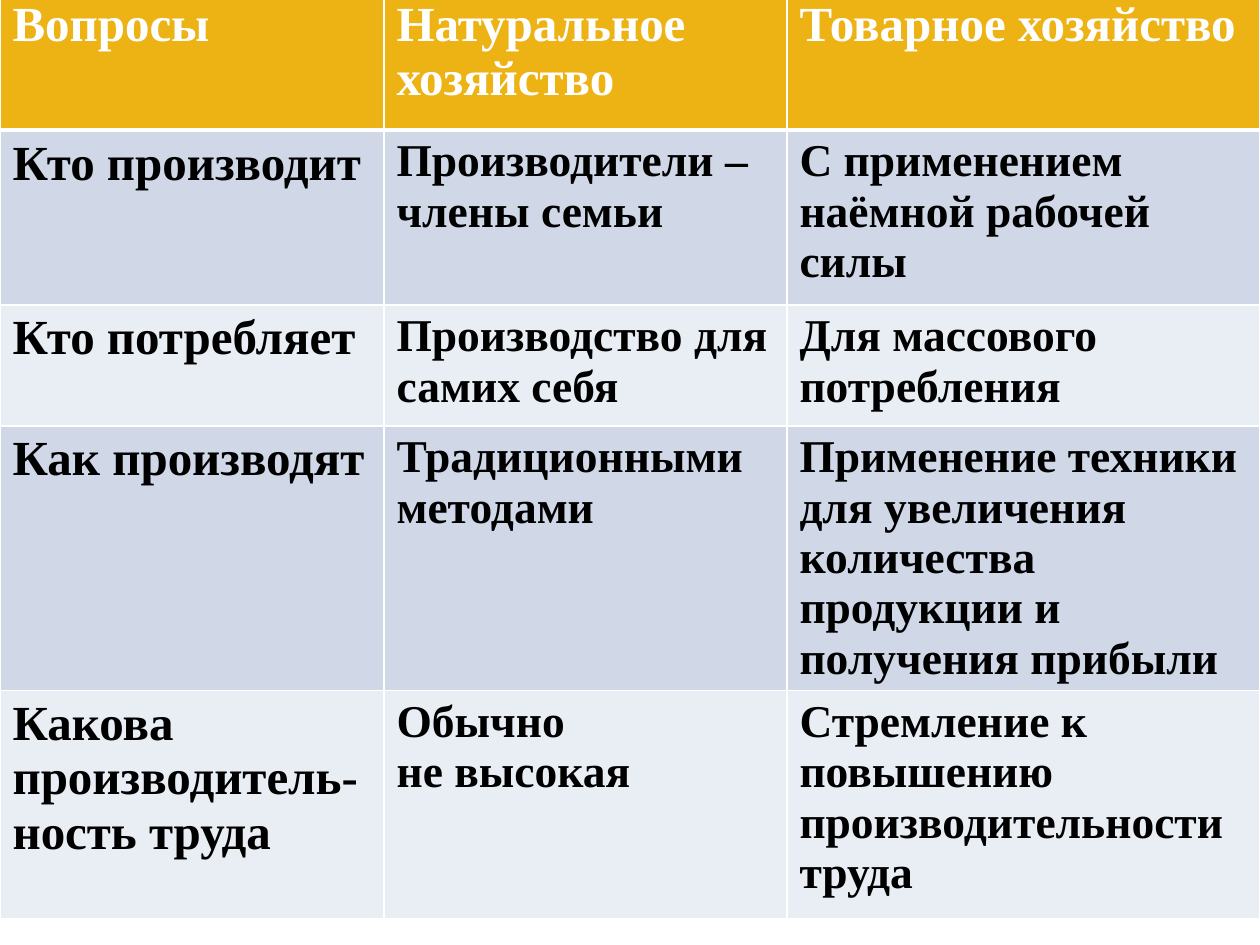
from pptx import Presentation
from pptx.dml.color import RGBColor
from pptx.oxml.ns import qn
from pptx.util import Emu, Pt
from lxml.etree import SubElement

PX = 914400 // 126
WHITE = RGBColor(0xFF, 0xFF, 0xFF)
BLACK = RGBColor(0x00, 0x00, 0x00)
GOLD = RGBColor(0xED, 0xB2, 0x14)
BAND_DARK = RGBColor(0xD0, 0xD8, 0xE8)
BAND_LIGHT = RGBColor(0xE9, 0xED, 0xF4)

COLUMN_WIDTHS = [384, 403, 473]
ROW_HEIGHTS = [139, 175, 121, 205, 228]
ROWS = [
    ["Вопросы", "Натуральное хозяйство", "Товарное хозяйство"],
    ["Кто производит", "Производители – члены семьи",
     "С применением наёмной рабочей силы"],
    ["Кто потребляет", "Производство для самих себя",
     "Для массового потребления"],
    ["Как производят", "Традиционными методами",
     "Применение техники для увеличения количества продукции и получения прибыли"],
    ["Какова производитель-ность труда", "Обычно\nне высокая",
     "Стремление к повышению производительности труда"],
]


def add_borders(cell, bottom_width):
    """Draw white 1 pt cell borders, with a separate width below."""
    properties = cell._tc.get_or_add_tcPr()
    for side, width in (("L", 1), ("R", 1), ("T", 1), ("B", bottom_width)):
        line = SubElement(properties, qn(f"a:ln{side}"), w=str(Pt(width)))
        fill = SubElement(line, qn("a:solidFill"))
        SubElement(fill, qn("a:srgbClr"), val=str(WHITE))


deck = Presentation()
deck.slide_width = Emu(1260 * PX)
deck.slide_height = Emu(945 * PX)
page = deck.slides.add_slide(deck.slide_layouts[6])

table = page.shapes.add_table(
    len(ROWS), len(COLUMN_WIDTHS), 0, Emu(-9 * PX),
    Emu(sum(COLUMN_WIDTHS) * PX), Emu(sum(ROW_HEIGHTS) * PX)).table
for column, width in zip(table.columns, COLUMN_WIDTHS):
    column.width = Emu(width * PX)
for row, height in zip(table.rows, ROW_HEIGHTS):
    row.height = Emu(height * PX)

for row_index, texts in enumerate(ROWS):
    is_header = row_index == 0
    band = BAND_DARK if row_index % 2 else BAND_LIGHT
    for column_index, text in enumerate(texts):
        cell = table.cell(row_index, column_index)
        # The line under a header is shared with the first body row
        add_borders(cell, 3 if is_header else 1)
        if row_index == 1:
            cell._tc.tcPr.find(qn("a:lnT")).set("w", str(Pt(3)))
        cell.fill.solid()
        cell.fill.fore_color.rgb = GOLD if is_header else band
        for line_index, line in enumerate(text.split("\n")):
            frame = cell.text_frame
            para = frame.add_paragraph() if line_index else frame.paragraphs[0]
            span = para.add_run()
            span.text = line
            span.font.name = "Times New Roman"
            span.font.size = Pt(28 if is_header or column_index == 0 else 26)
            span.font.bold = True
            span.font.color.rgb = WHITE if is_header else BLACK

deck.save("out.pptx")
